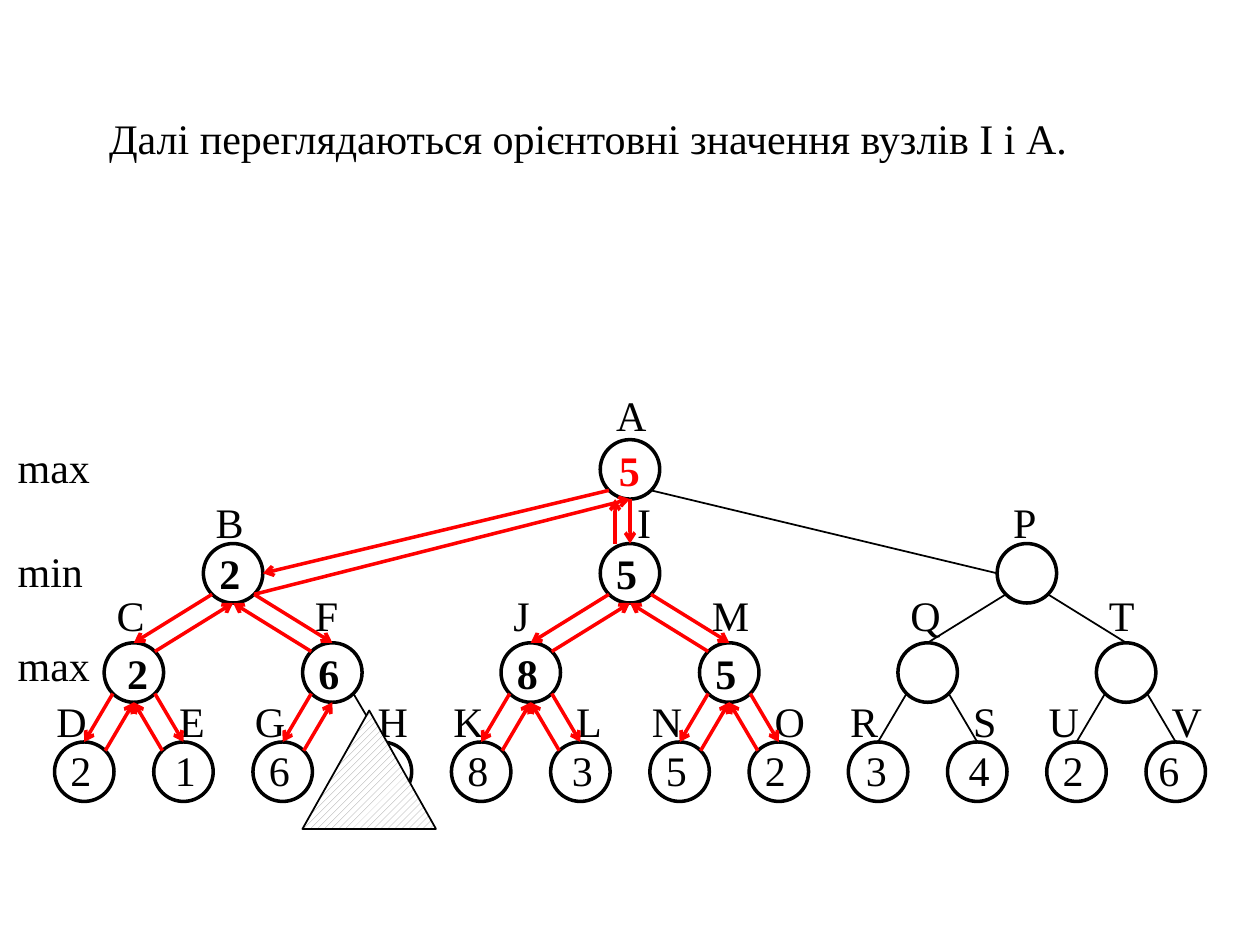
"""Build a slide with a minimax game tree, its visited paths and one pruned leaf."""
from dataclasses import dataclass

from lxml import etree
from pptx import Presentation
from pptx.dml.color import RGBColor
from pptx.enum.dml import MSO_PATTERN
from pptx.enum.shapes import MSO_CONNECTOR, MSO_SHAPE
from pptx.enum.text import MSO_ANCHOR, MSO_AUTO_SIZE
from pptx.oxml.ns import qn
from pptx.util import Pt

STRAIGHT = MSO_CONNECTOR.STRAIGHT
ELLIPSE = MSO_SHAPE.OVAL
EXTRACT = MSO_SHAPE.FLOWCHART_EXTRACT
HATCH = MSO_PATTERN.WIDE_UPWARD_DIAGONAL
TOP = MSO_ANCHOR.TOP
FIT_SHAPE = MSO_AUTO_SIZE.SHAPE_TO_FIT_TEXT
NO_FIT = MSO_AUTO_SIZE.NONE

BLACK, RED, WHITE, GREY = "000000", "FF0000", "FFFFFF", "969696"
RADIUS = 17
DIAGONAL = 12.02
LEAF_LEFT, LEAF_STEP = 48.15, 56.7
LEVEL_Y = (268.2, 327.6, 384.3, 441)
LABEL_TOP = (219, 280, 333.5, 394)
TEXT_HEIGHT = 36
DIGIT_WIDTH = 26.4
LABEL_SHIFT = {"A": -15, "I": -3, "P": -15}
LABEL_WIDTH = {"B": 30.7, "C": 30.7, "R": 30.7, "E": 29.3, "L": 29.3, "T": 29.3,
               "F": 28, "P": 28, "S": 28, "I": 22.4, "J": 23.7, "M": 36}
PLAYERS = (("max", 248.5, 56.2), ("min", 308, 51.8), ("max", 362, 56.2))


@dataclass(frozen=True)
class Node:
    """A tree node, with its column counted in leaf steps."""
    name: str
    level: int
    column: float
    value: str = ""
    parent: str = ""
    visited: bool = True
    value_shift: float = -15

    @property
    def x(self) -> float:
        """Return the horizontal centre."""
        return LEAF_LEFT + LEAF_STEP * self.column

    @property
    def y(self) -> float:
        """Return the vertical centre."""
        return LEVEL_Y[self.level]


NODES = (
    Node("A", 0, 5.5, "5", value_shift=-13.5),
    Node("B", 1, 1.5, "2", "A"),
    Node("I", 1, 5.5, "5", "A"),
    Node("P", 1, 9.5, "", "A", False),
    Node("C", 2, 0.5, "2", "B", value_shift=-11),
    Node("F", 2, 2.5, "6", "B"),
    Node("J", 2, 4.5, "8", "I"),
    Node("M", 2, 6.5, "5", "I"),
    Node("Q", 2, 8.5, "", "P", False),
    Node("T", 2, 10.5, "", "P", False),
    Node("D", 3, 0, "2", "C"),
    Node("E", 3, 1, "1", "C", value_shift=-12),
    Node("G", 3, 2, "6", "F"),
    Node("H", 3, 3, "", "F", False),
    Node("K", 3, 4, "8", "J"),
    Node("L", 3, 5, "3", "J", value_shift=-12),
    Node("N", 3, 6, "5", "M"),
    Node("O", 3, 7, "2", "M"),
    Node("R", 3, 8, "3", "Q", False, -14),
    Node("S", 3, 9, "4", "Q", False, -12),
    Node("U", 3, 10, "2", "T", False),
    Node("V", 3, 11, "6", "T", False, -17),
)
BY_NAME = {node.name: node for node in NODES}


def color(value: str) -> RGBColor:
    """Turn a hex string into a colour."""
    return RGBColor.from_string(value)


def apply_format(target, values: dict) -> None:
    """Set each named attribute on the target."""
    for name, value in values.items():
        setattr(target, name, value)


def add_text(slide, text: str, left: float, top: float, width: float,
             height: float = TEXT_HEIGHT, bold: bool = False, ink: str = BLACK,
             frame_format: dict | None = None) -> None:
    """Add one line of text in a box."""
    box = slide.shapes.add_textbox(Pt(left), Pt(top), Pt(width), Pt(height))
    frame = box.text_frame
    apply_format(frame, {"word_wrap": False, "auto_size": FIT_SHAPE,
                         "vertical_anchor": TOP, **(frame_format or {})})
    run = frame.paragraphs[0].add_run()
    run.text = text
    apply_format(run.font, {"name": "Times New Roman", "size": Pt(24), "bold": bold})
    run.font.color.rgb = color(ink)


def add_outlined(slide, kind, left: float, top: float, width: float, height: float,
                 line_width: float):
    """Add a preset shape with a black outline and no shadow."""
    shape = slide.shapes.add_shape(kind, Pt(left), Pt(top), Pt(width), Pt(height))
    shape.shadow.inherit = False
    shape.line.color.rgb = color(BLACK)
    shape.line.width = Pt(line_width)
    return shape


def add_circle(slide, node: Node):
    """Add the circle of a node."""
    circle = add_outlined(slide, ELLIPSE, node.x - RADIUS, node.y - RADIUS,
                          2 * RADIUS, 2 * RADIUS, 2)
    circle.fill.solid()
    circle.fill.fore_color.rgb = color(WHITE)
    return circle


def add_line(slide, start: tuple, end: tuple, arrow: bool):
    """Add a thin black line or a red arrow."""
    connector = slide.shapes.add_connector(STRAIGHT, *map(Pt, start + end))
    connector.line.color.rgb = color(RED if arrow else BLACK)
    connector.line.width = Pt(2 if arrow else 1)
    if arrow:
        etree.SubElement(connector.line._get_or_add_ln(), qn("a:tailEnd"), type="arrow")
    etree.SubElement(connector._element.spPr, qn("a:effectLst"))
    return connector


def side_of(node: Node, other: Node) -> int:
    """Return -1, 0 or 1 for the other node on the left, below or on the right."""
    return (other.x > node.x) - (other.x < node.x)


def add_descent(slide, node: Node, circles: dict, arrow: bool) -> None:
    """Join a parent to its child, going down."""
    parent = BY_NAME[node.parent]
    side = side_of(parent, node)
    drop = DIAGONAL if side else RADIUS
    start = (parent.x + side * DIAGONAL, parent.y + drop)
    if node.level == 1 and side:
        add_line(slide, start, (node.x - side * RADIUS, node.y), arrow)
    else:
        line = add_line(slide, start, (node.x, node.y - RADIUS), arrow)
        line.end_connect(circles[node.name], 0)


def add_return(slide, node: Node) -> None:
    """Draw the arrow that takes a value back to the parent."""
    parent = BY_NAME[node.parent]
    side = side_of(node, parent)
    if not side:
        x = node.x - RADIUS / 2
        add_line(slide, (x, node.y - RADIUS), (x, parent.y + RADIUS), True)
        return
    rise = DIAGONAL if node.level == 1 else -DIAGONAL
    add_line(slide, (node.x + side * DIAGONAL, node.y + rise),
             (parent.x, parent.y + RADIUS), True)


def add_node_text(slide, node: Node) -> None:
    """Add the letter and the value of a node."""
    is_leaf = node.level == 3
    leaf_shift = -9.5 if node.column % 2 else -23
    shift = LABEL_SHIFT.get(node.name, leaf_shift if is_leaf else -RADIUS)
    add_text(slide, node.name, node.x + shift, LABEL_TOP[node.level],
             LABEL_WIDTH.get(node.name, 32))
    if node.value:
        add_text(slide, node.value, node.x + node.value_shift,
                 node.y - (19 if is_leaf else 18), DIGIT_WIDTH,
                 bold=not is_leaf, ink=BLACK if node.level else RED)


def add_cutoff(slide, node: Node) -> None:
    """Cover a pruned node with a hatched triangle."""
    triangle = add_outlined(slide, EXTRACT, node.x - 45.4, node.y - 35, 76.3, 67.7, 1)
    triangle.fill.patterned()
    triangle.fill.pattern = HATCH
    triangle.fill.fore_color.rgb = color(GREY)
    triangle.fill.back_color.rgb = color(WHITE)


def main() -> None:
    """Build and save the presentation."""
    presentation = Presentation()
    apply_format(presentation, {"slide_width": Pt(720), "slide_height": Pt(540)})
    slide = presentation.slides.add_slide(presentation.slide_layouts[6])
    add_text(slide, "Далі переглядаються орієнтовні значення вузлів I і А.",
             0, 60.5, 700, 147.6,
             frame_format={"word_wrap": True, "auto_size": NO_FIT,
                           "margin_left": Pt(62.4), "margin_right": Pt(14.4)})
    circles = {node.name: add_circle(slide, node) for node in NODES}
    children = [node for node in NODES if node.parent]
    for node in children:
        add_descent(slide, node, circles, False)
    for node in NODES:
        add_node_text(slide, node)
    for text, top, width in PLAYERS:
        add_text(slide, text, 3, top, width)
    for node in children:
        if node.visited:
            add_descent(slide, node, circles, True)
            add_return(slide, node)
    add_cutoff(slide, BY_NAME["H"])
    presentation.save("out.pptx")


if __name__ == "__main__":
    main()
